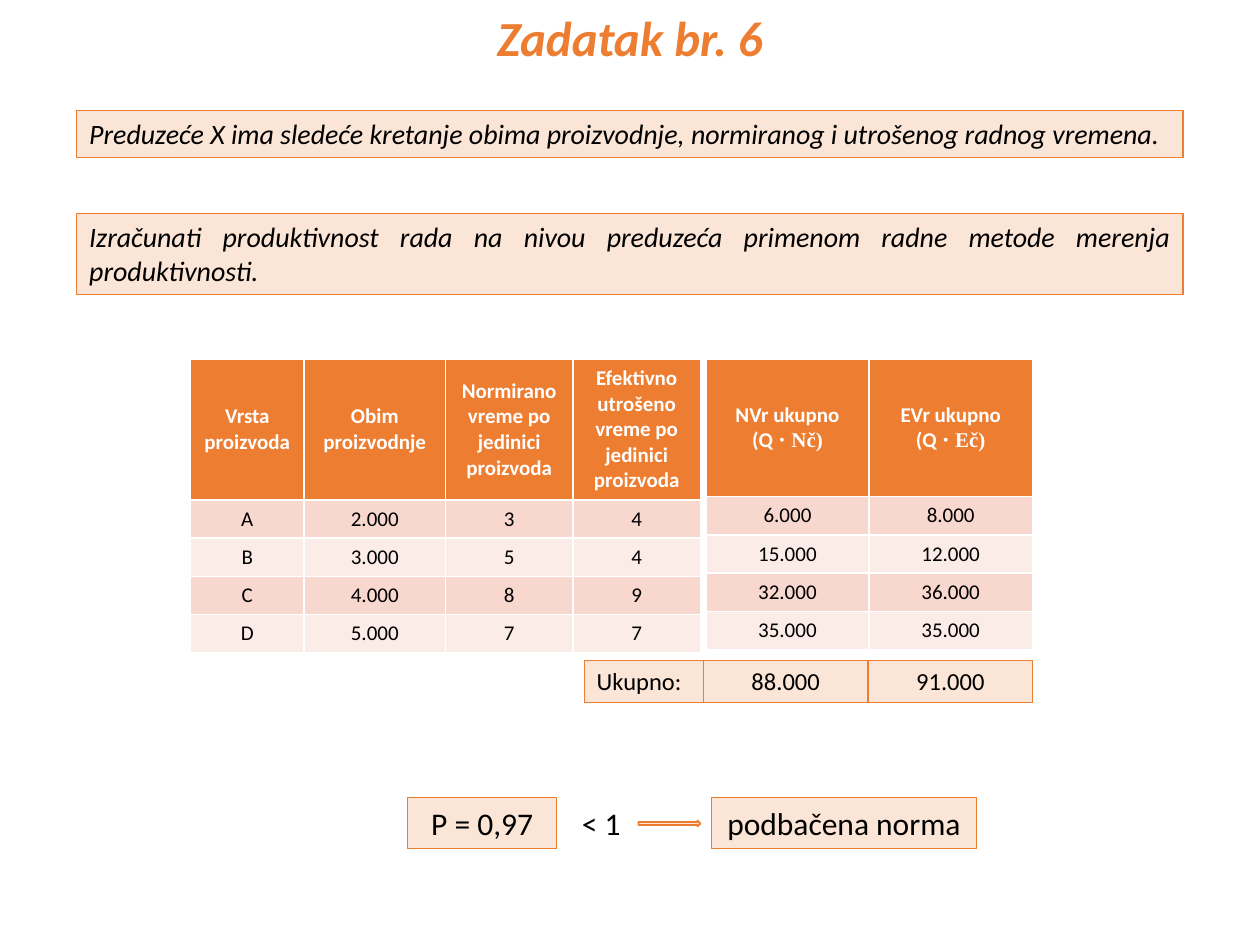
from pptx import Presentation
from pptx.dml.color import RGBColor
from pptx.enum.shapes import MSO_SHAPE as Kind
from pptx.enum.text import MSO_ANCHOR as Anchor, MSO_AUTO_SIZE as Fit, PP_ALIGN as Align
from pptx.util import Cm, Pt

ORANGE = RGBColor(0xED, 0x7D, 0x31)
PEACH = RGBColor(0xFB, 0xE5, 0xD6)
BANDS = [RGBColor(0xF8, 0xD7, 0xCE), RGBColor(0xFC, 0xEC, 0xE8)]
WHITE = RGBColor(0xFF, 0xFF, 0xFF)
BLACK = RGBColor(0, 0, 0)
FONT, MATH = "Calibri", "Times New Roman"

# Content: a (text, tail) pair has its tail in the math font
TITLE = "Zadatak br. 6"
TASKS = [  # text, top, height
    ("Preduzeće X ima sledeće kretanje obima proizvodnje, "
     "normiranog i utrošenog radnog vremena.", 2.23, 0.94),
    ("Izračunati produktivnost rada na nivou preduzeća primenom "
     "radne metode merenja produktivnosti.", 4.31, 1.63),
]
GIVEN = [
    ["Vrsta proizvoda", "Obim proizvodnje", "Normirano vreme po jedinici proizvoda",
     "Efektivno utrošeno vreme po jedinici proizvoda"],
    ["A", "2.000", "3", "4"],
    ["B", "3.000", "5", "4"],
    ["C", "4.000", "8", "9"],
    ["D", "5.000", "7", "7"],
]
TOTALS = [
    [("NVr ukupno\v(Q ", "⋅ Nč)"), ("EVr ukupno\v(Q ", "⋅ Eč)")],
    ["6.000", "8.000"],
    ["15.000", "12.000"],
    ["32.000", "36.000"],
    ["35.000", "35.000"],
]
SUMS = [  # text, width, alignment
    ("Ukupno:", 2.4, Align.LEFT),
    ("88.000", 3.32, Align.CENTER),
    ("91.000", 3.32, Align.CENTER),
]
RESULT = [("P = 0,97", 8.22, 3), ("podbačena norma", 14.35, 5.33)]  # text, left, width
SIGN = "< 1"

prs = Presentation()
prs.slide_width, prs.slide_height = Cm(25.4), Cm(19.05)
slide = prs.slides.add_slide(prs.slide_layouts[5])
shapes = slide.shapes


def style(para, size, color=BLACK, align=Align.CENTER, bold=False, italic=False):
    para.alignment = align
    font = para.font
    font.name, font.size, font.bold, font.italic = FONT, Pt(size), bold, italic
    font.color.rgb = color


def add_shape(kind, left, top, width, height, weight=0.75):
    shape = shapes.add_shape(kind, Cm(left), Cm(top), Cm(width), Cm(height))
    shape.shadow.inherit = False
    shape.fill.solid()
    shape.fill.fore_color.rgb = PEACH
    shape.line.color.rgb = ORANGE
    shape.line.width = Pt(weight)
    return shape


def add_box(text, left, top, width, height, size, align=Align.CENTER, italic=False):
    frame = add_shape(Kind.RECTANGLE, left, top, width, height).text_frame
    frame.word_wrap = True
    frame.vertical_anchor = Anchor.TOP
    frame.text = text
    style(frame.paragraphs[0], size, align=align, italic=italic)


def add_grid(rows, left, widths):
    table = shapes.add_table(len(rows), len(widths), Cm(left), Cm(7.24),
                             Cm(sum(widths)), Cm(5.81)).table
    for col, width in zip(table.columns, widths):
        col.width = Cm(width)
    for i, row in enumerate(rows):
        head = i == 0
        table.rows[i].height = Cm(2.77 if head else 0.76)
        for j, item in enumerate(row):
            text, tail = (item, "") if isinstance(item, str) else item
            cell = table.cell(i, j)
            cell.fill.solid()
            cell.fill.fore_color.rgb = ORANGE if head else BANDS[(i - 1) % 2]
            cell.vertical_anchor = Anchor.MIDDLE if head else Anchor.TOP
            para = cell.text_frame.paragraphs[0]
            para.text = text
            style(para, 12, WHITE if head else BLACK, bold=head)
            if tail:
                run = para.add_run()
                run.text, run.font.name = tail, MATH


# Title
title = shapes.title
title.left, title.top, title.width, title.height = Cm(9.73), Cm(0.03), Cm(5.94), Cm(1.45)
frame = title.text_frame
frame.text = TITLE
frame.word_wrap = False
frame.auto_size = Fit.NONE
frame.vertical_anchor = Anchor.TOP
style(frame.paragraphs[0], 28, ORANGE, bold=True, italic=True)

# Task texts
for text, top, height in TASKS:
    add_box(text, 1.55, top, 22.3, height, 16, Align.JUSTIFY, True)

# Tables side by side
add_grid(GIVEN, 3.84, [2.29, 2.85, 2.57, 2.57])
add_grid(TOTALS, 14.23, [3.29, 3.29])

# Row of sums
left = 11.78
for text, width, align in SUMS:
    add_box(text, left, 13.31, width, 0.86, 14, align)
    left += width

# Result
for text, left, width in RESULT:
    add_box(text, left, 16.08, width, 1.02, 18)
sign = shapes.add_textbox(Cm(11.48), Cm(16.08), Cm(1.4), Cm(1.02)).text_frame
sign.word_wrap = True
sign.text = SIGN
style(sign.paragraphs[0], 18, align=Align.LEFT)
add_shape(Kind.RIGHT_ARROW, 12.87, 16.54, 1.25, 0.12, 1)

prs.save("out.pptx")
